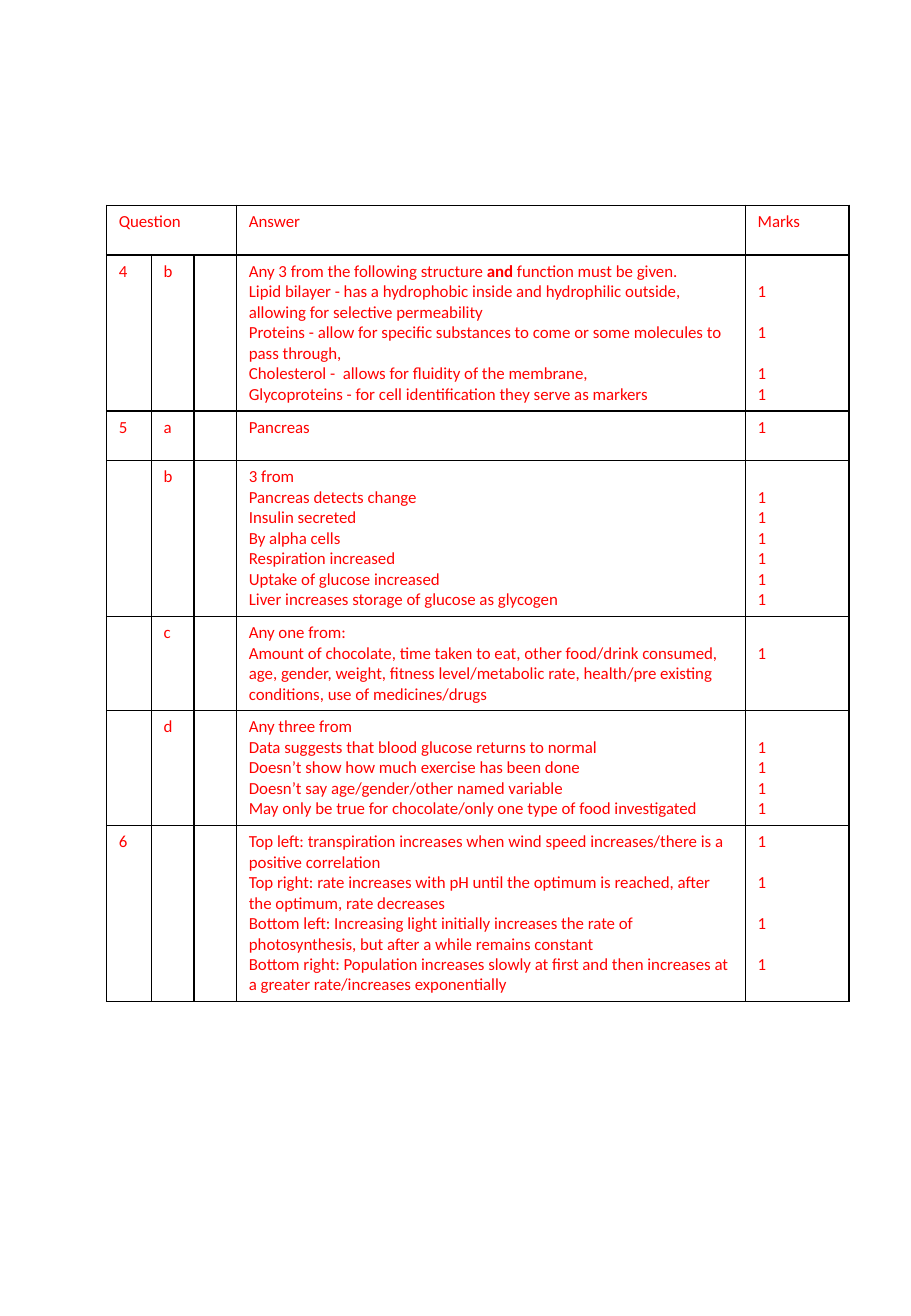
from lxml import etree
from pptx import Presentation
from pptx.dml.color import RGBColor
from pptx.oxml.ns import qn
from pptx.util import Cm, Pt

COLORS = {"text": "FF0000", "border": "000000"}
COLUMN_WIDTHS = [0.94, 0.89, 0.89, 10.64, 2.16]
ROW_HEIGHT = Cm(1.04)
LINE = Pt(12.2)

# Question, part, answer lines, and marks, where "-" skips one line.
# Asterisks enclose bold words.
ROWS = [
    ("Question", "", ["Answer"], ["Marks"]),
    ("4", "b", [
        "Any 3 from the following structure *and* function must be given.",
        "Lipid bilayer - has a hydrophobic inside and hydrophilic outside, "
        "allowing for selective permeability",
        "Proteins - allow for specific substances to come or some molecules "
        "to pass through,",
        "Cholesterol -  allows for fluidity of the membrane,",
        "Glycoproteins - for cell identification they serve as markers",
    ], "-1-1-11"),
    ("5", "a", ["Pancreas"], "1"),
    ("", "b", [
        "3 from",
        "Pancreas detects change",
        "Insulin secreted",
        "By alpha cells",
        "Respiration increased",
        "Uptake of glucose increased",
        "Liver increases storage of glucose as glycogen",
    ], "-111111"),
    ("", "c", [
        "Any one from:",
        "Amount of chocolate, time taken to eat, other food/drink consumed, "
        "age, gender, weight, fitness level/metabolic rate, health/pre "
        "existing conditions, use of medicines/drugs",
    ], "-1"),
    ("", "d", [
        "Any three from",
        "Data suggests that blood glucose returns to normal",
        "Doesn’t show how much exercise has been done",
        "Doesn’t say age/gender/other named variable",
        "May only be true for chocolate/only one type of food investigated",
    ], "-1111"),
    ("6", "", [
        "Top left: transpiration increases when wind speed increases/there "
        "is a positive correlation",
        "Top right: rate increases with pH until the optimum is reached, "
        "after the optimum, rate decreases",
        "Bottom left: Increasing light initially increases the rate of "
        "photosynthesis, but after a while remains constant",
        "Bottom right: Population increases slowly at first and then "
        "increases at a greater rate/increases exponentially",
    ], "1-1-1-1"),
]


def add_borders(cell):
    tcPr = cell._tc.get_or_add_tcPr()
    for side in ("lnL", "lnR", "lnT", "lnB"):
        ln = etree.SubElement(tcPr, qn(f"a:{side}"), w=str(Pt(1)))
        fill = etree.SubElement(ln, qn("a:solidFill"))
        etree.SubElement(fill, qn("a:srgbClr"), val=COLORS["border"])


def write_lines(cell, lines):
    """Write one paragraph per line; each "-" becomes a line of space."""
    tf = cell.text_frame
    p, gap = None, 0
    for line in lines:
        if line == "-":
            gap += 1
            continue
        if p is None:
            p = tf.paragraphs[0]
            cell.margin_top = Cm(0.13) + gap * LINE
        else:
            p = tf.add_paragraph()
            p.space_before = gap * LINE
        gap = 0
        p.font.name = "Calibri"
        p.font.size = Pt(10)
        p.font.color.rgb = RGBColor.from_string(COLORS["text"])
        for i, part in enumerate(line.split("*")):
            r = p.add_run()
            r.text = part
            if i % 2:
                r.font.bold = True


prs = Presentation()
prs.slide_width, prs.slide_height = Cm(19.05), Cm(27.51)
s = prs.slides.add_slide(prs.slide_layouts[6])

frame = s.shapes.add_table(len(ROWS), len(COLUMN_WIDTHS), Cm(2.23), Cm(4.29),
                           Cm(sum(COLUMN_WIDTHS)), ROW_HEIGHT * len(ROWS))
table = frame.table
table.first_row = table.horz_banding = False
for column, width in zip(table.columns, COLUMN_WIDTHS):
    column.width = Cm(width)

for row, (question, part, answers, marks) in zip(table.rows, ROWS):
    row.height = ROW_HEIGHT
    for cell, lines in zip(row.cells, ([question], [part], [], answers, marks)):
        add_borders(cell)
        cell.fill.background()
        write_lines(cell, lines)

table.cell(0, 0).merge(table.cell(0, 2))

prs.save("out.pptx")
